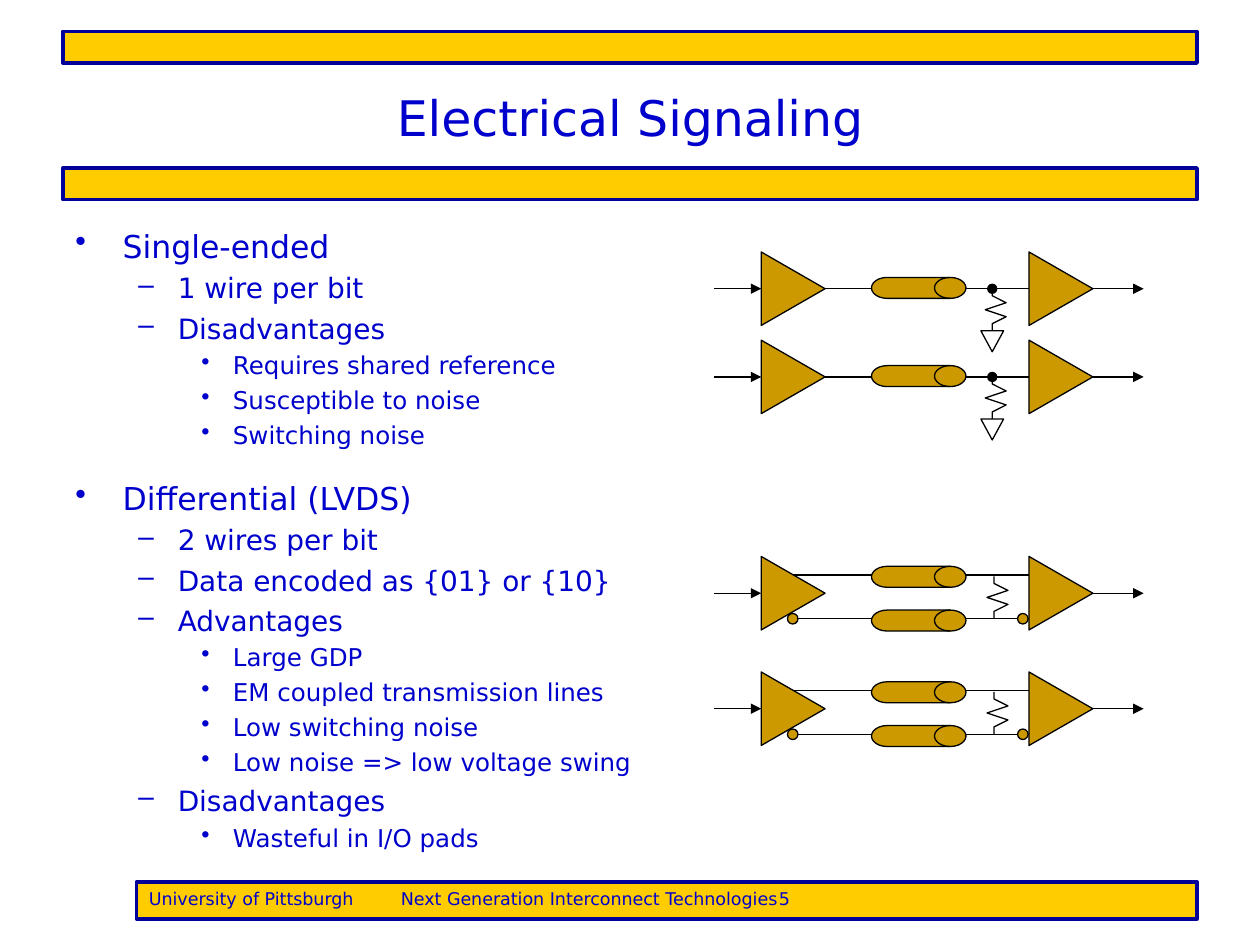
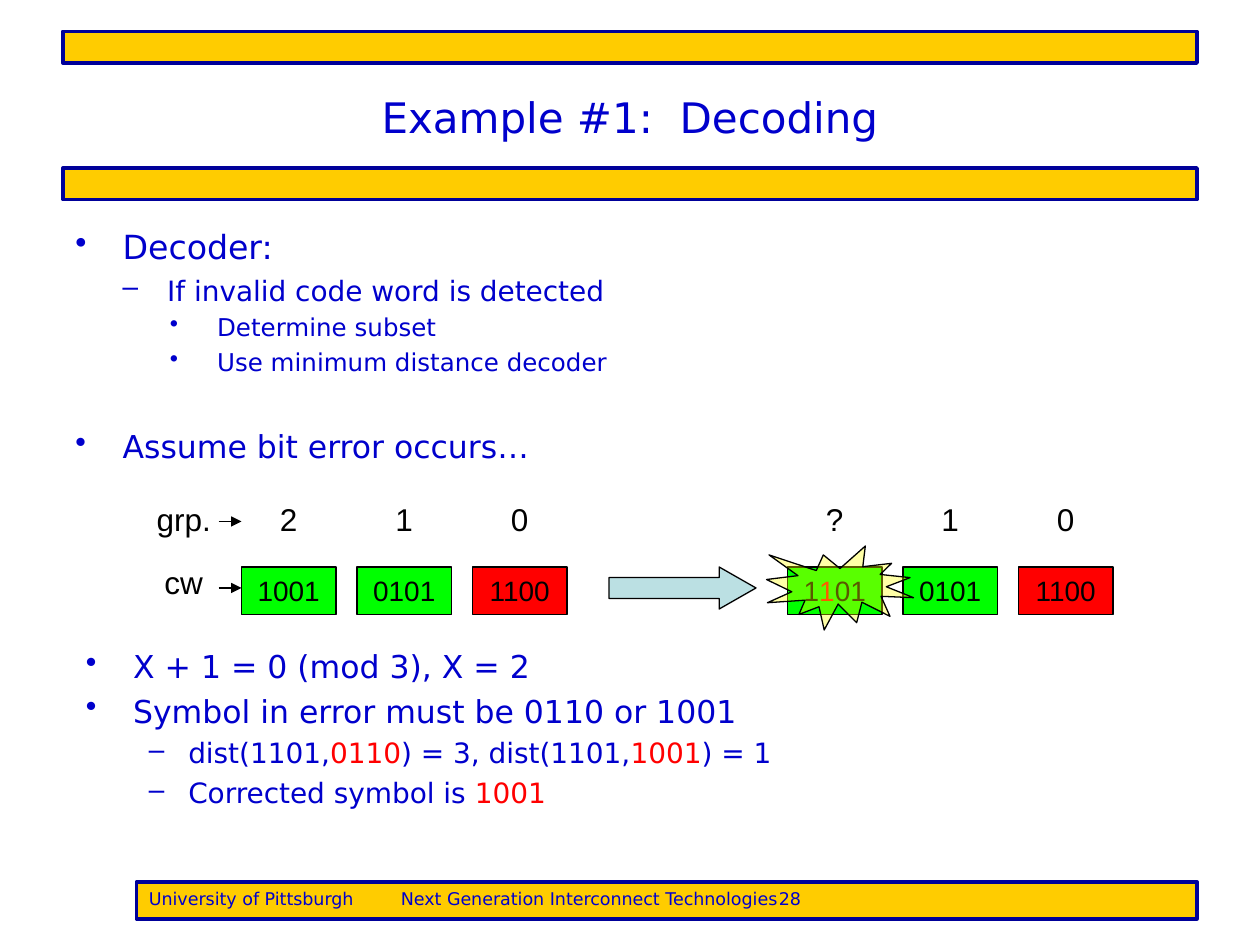
import pptx
import pptx.dml.color
import pptx.enum.shapes
import pptx.enum.text
import pptx.oxml
import pptx.oxml.ns
import pptx.util
from lxml import etree

Pt = pptx.util.Pt
qn = pptx.oxml.ns.qn
SHAPE = pptx.enum.shapes.MSO_SHAPE
ANCHOR = pptx.enum.text.MSO_ANCHOR
ALIGN = pptx.enum.text.PP_ALIGN

COLORS = {
    "text": "0000CC", "band": "FFCC00", "band_edge": "000099", "ink": "000000",
    "component": "CC9900", "valid": "00FF00", "error": "FF0000",
    "channel": "BBE0E3", "burst": "FFFF00",
}
BODY_FONT, DIAGRAM_FONT = "DejaVu Sans", "Arial"
BULLETS = ["•", "–", "•"]
SIZES = [18, 16, 14]
INDENTS = [(27, -27), (58.5, -22.5), (90, -18)]
DECODER_INDENTS = [(27, -27), (52.5, -25.5), (81, -27)]
SPACE_BEFORE = 0.23  # share of the text size

SINGLE_ENDED = [
    (0, "Single-ended"), (1, "1 wire per bit"), (1, "Disadvantages"),
    (2, "Requires shared reference"), (2, "Susceptible to noise"), (2, "Switching noise"),
]
DIFFERENTIAL = [
    (0, "Differential (LVDS)"), (1, "2 wires per bit"),
    (1, "Data encoded as {01} or {10}"), (1, "Advantages"),
    (2, "Large GDP"), (2, "EM coupled transmission lines"), (2, "Low switching noise"),
    (2, "Low noise => low voltage swing"), (1, "Disadvantages"), (2, "Wasteful in I/O pads"),
]
DECODER = [
    (0, "Decoder:"), (1, "If invalid code word is detected"),
    (2, "Determine subset"), (2, "Use minimum distance decoder"),
]
CORRECTION = [
    (0, "X + 1 = 0 (mod 3), X = 2"), (0, "Symbol in error must be 0110 or 1001"),
    (1, "dist(1101,|0110|) = 3, dist(1101,|1001|) = 1"), (1, "Corrected symbol is |1001"),
]
SENT = [("2", "1001", "valid"), ("1", "0101", "valid"), ("0", "1100", "error")]
RECEIVED = [("?", "1|1|01", "valid"), ("1", "0101", "valid"), ("0", "1100", "error")]


def rgb(name):
    return pptx.dml.color.RGBColor.from_string(COLORS[name])


def write_runs(paragraph, marked, size, font=BODY_FONT, color="text"):
    """Write text whose every second part between bars is in the error colour."""
    for i, part in enumerate(marked.split("|")):
        run = paragraph.add_run()
        run.text = part
        run.font.size = Pt(size)
        run.font.name = font
        run.font.color.rgb = rgb("error" if i % 2 else color)


def paint(shape, fill=None, edge="ink", weight=0.75):
    shape.shadow.inherit = False
    if fill:
        shape.fill.solid()
        shape.fill.fore_color.rgb = rgb(fill)
    else:
        shape.fill.background()
    shape.line.color.rgb = rgb(edge)
    shape.line.width = Pt(weight)


def draw(shapes, kind, left, top, width, height, fill=None, **style):
    shape = shapes.add_shape(kind, Pt(left), Pt(top), Pt(width), Pt(height))
    paint(shape, fill, **style)
    return shape


def line_end(line, end, kind):
    etree.SubElement(line._get_or_add_ln(), qn("a:" + end), type=kind)


def wire(shapes, x1, x2, y, arrow=False):
    line = shapes.add_connector(
        pptx.enum.shapes.MSO_CONNECTOR.STRAIGHT, Pt(x1), Pt(y), Pt(x2), Pt(y))
    line.line.color.rgb = rgb("ink")
    line.line.width = Pt(0.75)
    if arrow:
        line_end(line.line, "tailEnd", "triangle")
    etree.SubElement(line._element.spPr, qn("a:effectLst"))


def band(slide, left, top, width, height):
    return draw(slide.shapes, SHAPE.RECTANGLE, left, top, width, height, "band",
                edge="band_edge", weight=2.25)


def footer(slide, number, left, top, width, height):
    bar = band(slide, left, top, width, height)
    bar.text_frame.vertical_anchor = ANCHOR.TOP
    paragraph = bar.text_frame.paragraphs[0]
    paragraph.alignment = ALIGN.LEFT
    stops = etree.SubElement(paragraph._p.get_or_add_pPr(), qn("a:tabLst"))
    for position in (144, 360):
        etree.SubElement(stops, qn("a:tab"), pos=str(Pt(position)), algn="l")
    write_runs(paragraph, f"University of Pittsburgh\tNext Generation Interconnect Technologies\t{number}", 10)


def new_slide(deck, title, title_size, number):
    slide = deck.slides.add_slide(deck.slide_layouts[5])
    for top in (96, 18):
        band(slide, 36, top, 648, 18)
    footer(slide, number, 78, 504, 606, 21)
    heading = slide.shapes.title
    heading.left, heading.top, heading.width, heading.height = Pt(36), Pt(21.6), Pt(648), Pt(90)
    frame = heading.text_frame
    frame.vertical_anchor = ANCHOR.MIDDLE
    frame.paragraphs[0].alignment = ALIGN.CENTER
    write_runs(frame.paragraphs[0], title, title_size)
    return slide


def bullet_list(slide, items, left, top, width, height, indents=INDENTS, sizes=SIZES):
    frame = slide.shapes.add_textbox(Pt(left), Pt(top), Pt(width), Pt(height)).text_frame
    frame.word_wrap = True
    for i, (level, marked) in enumerate(items):
        paragraph = frame.add_paragraph() if i else frame.paragraphs[0]
        paragraph.level = level
        margin, indent = indents[level]
        properties = paragraph._p.get_or_add_pPr()
        properties.set("marL", str(Pt(margin)))
        properties.set("indent", str(Pt(indent)))
        etree.SubElement(properties, qn("a:buChar"), char=BULLETS[level])
        if i:
            paragraph.space_before = Pt(round(SPACE_BEFORE * sizes[level], 1))
        write_runs(paragraph, marked, sizes[level])


def amplifier(shapes, left, axis):
    """Triangle pointing right, 36.5 wide and 42 high, centred on the axis."""
    triangle = draw(shapes, SHAPE.ISOSCELES_TRIANGLE, left - 2.75, axis - 18.25, 42, 36.5, "component")
    triangle.rotation = 90


def transmission_line(shapes, left, axis):
    draw(shapes, SHAPE.FLOWCHART_DIRECT_ACCESS_STORAGE, left, axis - 6, 54, 12, "component")


def resistor(shapes, x, top, node=False):
    """Zigzag 24 high, with a dot at its top if it hangs from a node."""
    outline = shapes.build_freeform(Pt(x), Pt(top))
    outline.add_line_segments(
        [(Pt(x + dx), Pt(top + 4 * step)) for step, dx in enumerate((0, 8, -4, 8, 0, 0), 1)],
        close=False)
    zigzag = outline.convert_to_shape()
    paint(zigzag)
    if node:
        line_end(zigzag.line, "headEnd", "oval")


def link_ends(shapes, left, axis):
    """Driver and receiver with the arrows into and out of the link."""
    for x in (27, 180):
        amplifier(shapes, left + x, axis)
    wire(shapes, left, left + 27, axis, arrow=True)
    wire(shapes, left + 216.5, left + 245.5, axis, arrow=True)


def single_ended_link(slide, left, top):
    shapes = slide.shapes.add_group_shape().shapes
    axis = top + 21
    link_ends(shapes, left, axis)
    wire(shapes, left + 63, left + 90, axis)
    wire(shapes, left + 137.5, left + 180, axis)
    resistor(shapes, left + 159, axis, node=True)
    draw(shapes, SHAPE.FLOWCHART_MERGE, left + 152.5, axis + 24, 13, 12)
    transmission_line(shapes, left + 90, axis - 0.5)


def differential_link(slide, left, top):
    shapes = slide.shapes.add_group_shape().shapes
    axis = top + 21
    link_ends(shapes, left, axis)
    for start, y in ((45, axis - 10.4), (47.5, axis + 14.6)):
        wire(shapes, left + start, left + 180, y)
        transmission_line(shapes, left + 90, y + 1)
    for x in (42, 173.5):
        draw(shapes, SHAPE.OVAL, left + x, axis + 11.6, 6, 6, "component")
    resistor(shapes, left + 160, axis - 9.6)


def center_text(shape, marked, size):
    frame = shape.text_frame
    frame.word_wrap = True
    frame.vertical_anchor = ANCHOR.MIDDLE
    frame.paragraphs[0].alignment = ALIGN.CENTER
    write_runs(frame.paragraphs[0], marked, size, DIAGRAM_FONT, "ink")


def label(shapes, text, left, top, width):
    center_text(shapes.add_textbox(Pt(left), Pt(top), Pt(width), Pt(29)), text, 18)


def code_words(shapes, words, left, top):
    for i, (group, word, color) in enumerate(words):
        x = left + 66 * i
        label(shapes, group, x + 6, top, 42)
        center_text(draw(shapes, SHAPE.RECTANGLE, x, top + 42, 54, 27, color), word, 16)


def transmission_diagram(slide, left, top):
    shapes = slide.shapes.add_group_shape().shapes
    for name, offset, arrow_offset in (("grp.", 0, 16), ("cw", 36, 54)):
        label(shapes, name, left, top + offset, 66)
        wire(shapes, left + 53, left + 66, top + arrow_offset, arrow=True)
    code_words(shapes, SENT, left + 66, top)
    channel = draw(shapes, SHAPE.RIGHT_ARROW, left + 276, top + 42, 84, 24, "channel")
    channel.adjustments[0], channel.adjustments[1] = 0.5, 0.875
    code_words(shapes, RECEIVED, left + 378, top)
    burst = draw(shapes, SHAPE.EXPLOSION1, left + 366, top + 30, 84, 48, "burst")
    tint = burst._element.spPr.find(qn("a:solidFill"))[0]
    etree.SubElement(tint, qn("a:alpha"), val="35000")


def signaling_slide(deck):
    slide = new_slide(deck, "Electrical Signaling", 28, 5)
    bullet_list(slide, SINGLE_ENDED, 36, 126, 336, 144)
    bullet_list(slide, DIFFERENTIAL, 36, 270, 348, 228)
    for top in (144, 194.4):
        single_ended_link(slide, 408, top)
    for top in (318, 384):
        differential_link(slide, 408, top)


def decoding_slide(deck):
    slide = new_slide(deck, "Example #1:  Decoding", 24, 28)
    bullet_list(slide, DECODER, 36, 126, 648, 114, DECODER_INDENTS, [19, 16, 14])
    bullet_list(slide, [(0, "Assume bit error occurs…")], 36, 240.5, 648, 38)
    transmission_diagram(slide, 72, 282)
    bullet_list(slide, CORRECTION, 42, 366, 648, 102)


def main():
    deck = pptx.Presentation()
    deck.slide_width, deck.slide_height = Pt(720), Pt(540)
    signaling_slide(deck)
    decoding_slide(deck)
    deck.save("out.pptx")


if __name__ == "__main__":
    main()
